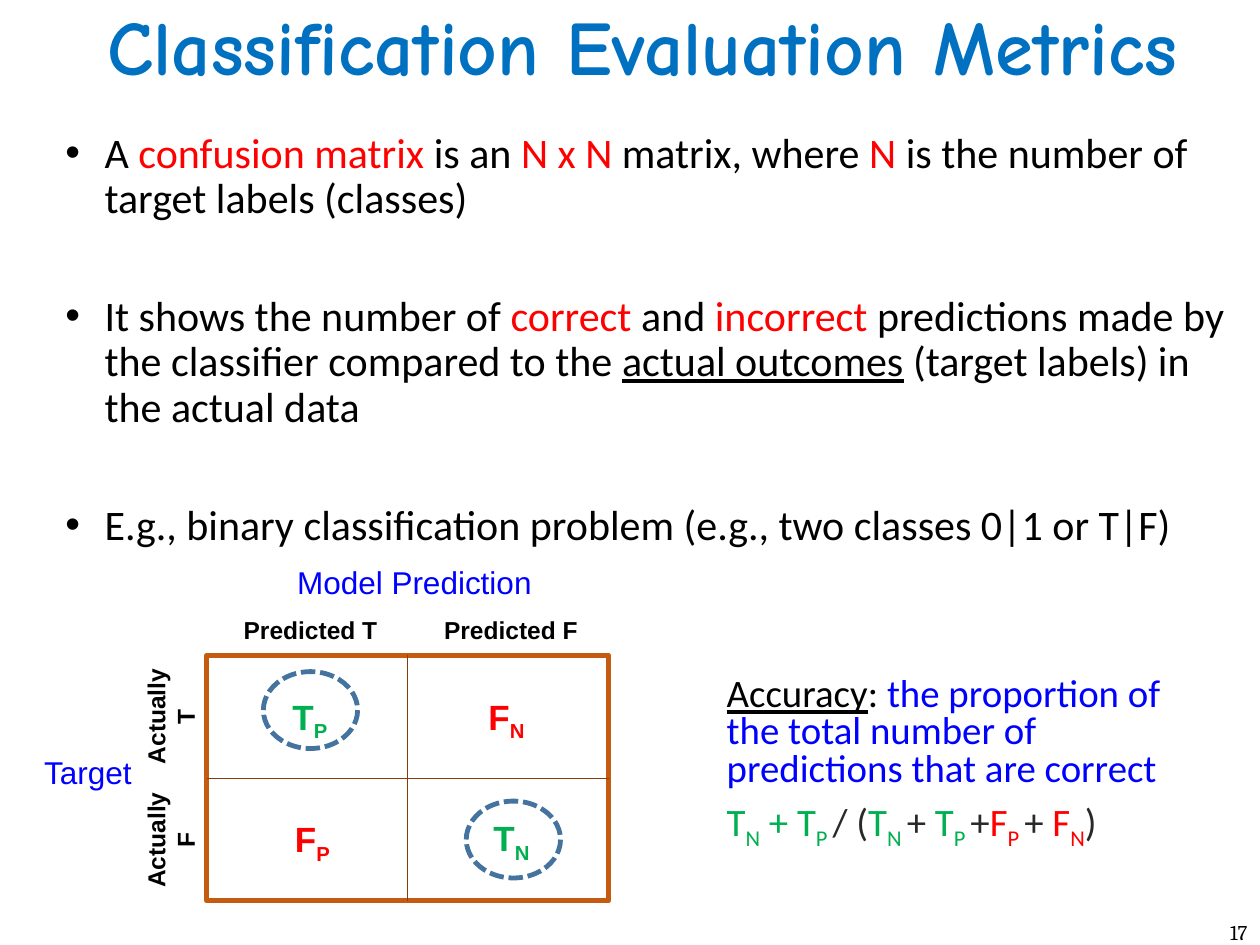
"""Build the slide on classification metrics with its confusion matrix."""
from dataclasses import dataclass
from typing import Any

from lxml import etree
from pptx import Presentation
from pptx import util as u
from pptx.dml.color import RGBColor
from pptx.enum import dml, shapes, text
from pptx.oxml import ns

BLACK = RGBColor(0x00, 0x00, 0x00)
CHARCOAL = RGBColor(0x29, 0x29, 0x29)
WHITE = RGBColor(0xFF, 0xFF, 0xFF)
RED = RGBColor(0xFF, 0x00, 0x00)
GREEN = RGBColor(0x00, 0xB0, 0x50)
BLUE = RGBColor(0x00, 0x00, 0xFF)
TITLE_BLUE = RGBColor(0x00, 0x70, 0xC0)
RING_BLUE = RGBColor(0x43, 0x73, 0x9E)
ORANGE = RGBColor(0xC5, 0x5A, 0x11)
BROWN = RGBColor(0x84, 0x3C, 0x0B)

LEFT = text.PP_ALIGN.LEFT
CENTER = text.PP_ALIGN.CENTER
RIGHT = text.PP_ALIGN.RIGHT


def write(paragraph, words, font="Arial", size=18, color=BLACK,
          bold=False, underline=False, sub=False):
    run = paragraph.add_run()
    run.text = words
    run.font.name = font
    run.font.size = u.Pt(size)
    run.font.color.rgb = color
    run.font.bold = bold
    run.font.underline = underline
    if sub:
        run.font._element.set("baseline", "-25000")


def lengths(*values):
    return [u.Cm(value) for value in values]


@dataclass
class Deck:
    slide: Any
    body_font: str = "Calibri"
    indent: float = 0.79

    def text_box(self, place, paragraphs, align=LEFT, wrap=True, rotation=0,
                 spacing=None, gaps=(), bullets=False, middle=False, **style):
        box = self.slide.shapes.add_textbox(*lengths(*place))
        box.rotation = rotation
        frame = box.text_frame
        frame.word_wrap = wrap
        if middle:
            frame.vertical_anchor = text.MSO_ANCHOR.MIDDLE
        for index, runs in enumerate(paragraphs):
            paragraph = frame.add_paragraph() if index else frame.paragraphs[0]
            paragraph.alignment = align
            if spacing:
                paragraph.line_spacing = spacing
            if gaps:
                paragraph.space_before = u.Pt(gaps[index])
            if bullets:
                self.bullet(paragraph)
            for words, changes in runs:
                write(paragraph, words, **{**style, **changes})

    def bullet(self, paragraph):
        properties = paragraph._p.get_or_add_pPr()
        properties.set("marL", str(u.Cm(self.indent)))
        properties.set("indent", str(-u.Cm(self.indent)))
        etree.SubElement(properties, ns.qn("a:buFont"), typeface="Arial")
        etree.SubElement(properties, ns.qn("a:buChar"), char="•")

    def label(self, place, words, **style):
        self.text_box(place, [[(words, {})]], **style)

    def outline(self, kind, place, color, width, fill=None, dash=None):
        shape = self.slide.shapes.add_shape(kind, *lengths(*place))
        shape.shadow.inherit = False
        if fill is None:
            shape.fill.background()
        else:
            shape.fill.solid()
            shape.fill.fore_color.rgb = fill
        shape.line.color.rgb = color
        shape.line.width = u.Pt(width)
        if dash:
            shape.line.dash_style = dash

    def rule(self, *ends):
        line = self.slide.shapes.add_connector(
            shapes.MSO_CONNECTOR.STRAIGHT, *lengths(*ends))
        line.line.color.rgb = BROWN
        line.line.width = u.Pt(0.5)
        etree.SubElement(line._element.spPr, ns.qn("a:effectLst"))


def add_explanation(deck):
    red = {"color": RED}
    points = [
        [("A ", {}), ("confusion matrix ", red), ("is an ", {}), ("N x N", red),
         (" matrix, where ", {}), ("N", red),
         (" is the number of target labels (classes)", {})],
        [("It shows the number of ", {}), ("correct", red), (" and ", {}),
         ("incorrect", red),
         (" predictions made by the classifier compared to the ", {}),
         ("actual outcomes", {"underline": True}),
         (" (target labels) in the actual data", {})],
        [("E.g., binary classification problem (e.g., two classes 0|1 or T|F)", {})],
    ]
    deck.text_box((1.07, 2.54, 24.33, 8.89), points, font=deck.body_font, size=24,
                  spacing=0.9, gaps=(7.5, 41.4, 41.4), bullets=True)


def add_matrix(deck):
    left, top, width, height = 4.17, 13.21, 8.1, 4.95
    middle_x, middle_y = left + width / 2, top + height / 2
    deck.label((5.74, 11.23, 5.44, 1.02), "Model Prediction", color=BLUE, wrap=False)
    deck.label((0.64, 15.06, 2.29, 1.02), "Target", color=BLUE, wrap=False)
    deck.outline(shapes.MSO_SHAPE.RECTANGLE, (left, top, width, height),
                 ORANGE, 3, fill=WHITE)
    deck.rule(middle_x, top, middle_x, top + height)
    deck.rule(left, middle_y, left + width, middle_y)

    heading = {"size": 14, "bold": True, "align": CENTER}
    for index, outcome in enumerate("TF"):
        deck.label((4.29 + 4.04 * index, 12.27, 3.94, 0.86),
                   f"Predicted {outcome}", **heading)
        deck.label((2.17, 13.72 + 2.49 * index, 2.54, 1.45),
                   f"Actually {outcome}", rotation=270, **heading)

    cells = [("T", "P", GREEN, 5.26, 13.89), ("F", "N", RED, 9.22, 13.89),
             ("F", "P", RED, 5.31, 16.36), ("T", "N", GREEN, 9.32, 16.33)]
    for letter, index, color, x, y in cells:
        deck.text_box((x, y, 1.98, 1.12), [[(letter, {}), (index, {"sub": True})]],
                      align=CENTER, size=20, bold=True, color=color)
    for x, y in ((5.31, 13.54), (9.4, 16.15)):
        deck.outline(shapes.MSO_SHAPE.OVAL, (x, y, 1.9, 1.55), RING_BLUE, 2.75,
                     dash=dml.MSO_LINE.SQUARE_DOT)


def add_accuracy(deck):
    green, red, gray = ({"color": color} for color in (GREEN, RED, CHARCOAL))
    green_sub, red_sub = ({**style, "sub": True} for style in (green, red))
    definition = [
        ("Accuracy", {"underline": True}), (": ", {}),
        ("the proportion of the total number of predictions that are correct",
         {"color": BLUE})]
    formula = [
        ("T", green), ("N", green_sub), (" + T", green), ("P ", green_sub),
        ("/ (", gray), ("T", green), ("N ", green_sub), ("+", gray),
        (" T", green), ("P ", green_sub), ("+", gray), ("F", red),
        ("P ", red_sub), ("+", gray), (" F", red), ("N", red_sub), (")", gray)]
    deck.text_box((14.4, 13.54, 10.36, 3.81), [definition, formula],
                  font=deck.body_font, size=22.2, spacing=0.8, gaps=(7.5, 7.5))


def main():
    presentation = Presentation()
    presentation.slide_width, presentation.slide_height = lengths(25.4, 19.05)
    deck = Deck(presentation.slides.add_slide(presentation.slide_layouts[6]))
    deck.text_box((0, 0, 25.4, 2.06),
                  [[(" ", {}), ("Classification Evaluation Metrics", {"bold": True})]],
                  font="Comic Neue", size=44, color=TITLE_BLUE, align=CENTER,
                  spacing=0.9, middle=True)
    add_explanation(deck)
    add_matrix(deck)
    add_accuracy(deck)
    deck.label((23.5, 18.42, 1.9, 0.64), "17", font="Cambria", size=12, align=RIGHT)
    presentation.save("out.pptx")


if __name__ == "__main__":
    main()
